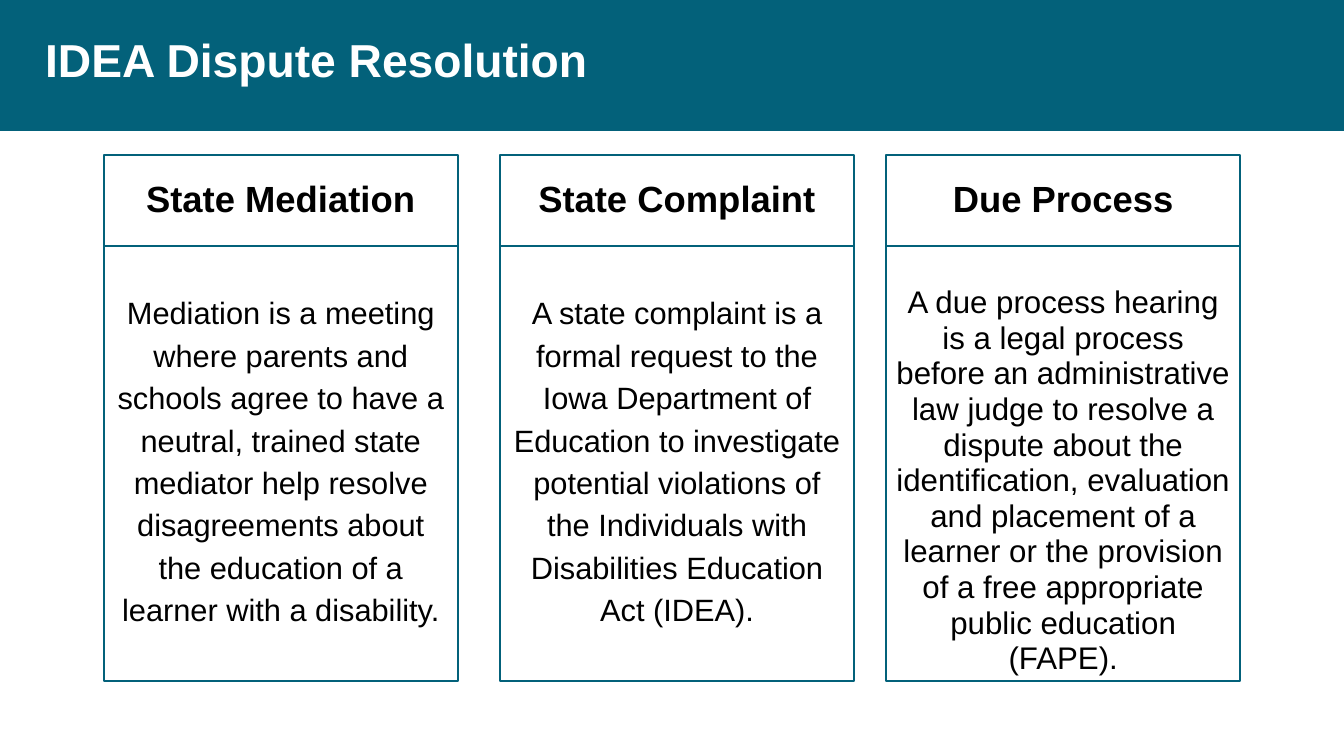
from dataclasses import dataclass

from pptx import Presentation
from pptx.dml.color import RGBColor as RGB
from pptx.enum.shapes import MSO_SHAPE as Shape
from pptx.enum.text import MSO_ANCHOR as Anchor, PP_ALIGN as Align
from pptx.util import Emu, Pt

EMU_PER_PX = 9144  # 100 px to the inch


@dataclass(frozen=True)
class Theme:
    teal: RGB = RGB(0x03, 0x61, 0x7A)
    white: RGB = RGB(0xFF, 0xFF, 0xFF)
    black: RGB = RGB(0, 0, 0)
    font: str = "Arial"
    title: float = 33
    heading: float = 26
    border: float = 1.5


@dataclass(frozen=True)
class Option:
    left: int
    heading: str
    body: str
    size: float = 22
    spacing: float = 1.15
    inset_top: int = 42


THEME = Theme()
SLIDE_W, SLIDE_H = 1333, 750
BAND_H = 130
CARD_W, CARD_TOP, HEADING_H, BODY_H = 351, 154, 90, 432

OPTIONS = [
    Option(103, "State Mediation",
           "Mediation is a meeting where parents and schools agree to have a "
           "neutral, trained state mediator help resolve disagreements about "
           "the education of a learner with a disability."),
    Option(496, "State Complaint",
           "A state complaint is a formal request to the Iowa Department of "
           "Education to investigate potential violations of the Individuals "
           "with Disabilities Education Act (IDEA)."),
    Option(879, "Due Process",
           "A due process hearing is a legal process before an administrative "
           "law judge to resolve a dispute about the identification, evaluation "
           "and placement of a learner or the provision of a free appropriate "
           "public education (FAPE).",
           size=22.3, spacing=0.95, inset_top=39),
]


def px(n: int) -> Emu:
    return Emu(n * EMU_PER_PX)


def add_rect(s, left: int, top: int, width: int, height: int):
    sp = s.shapes.add_shape(Shape.RECTANGLE, px(left), px(top), px(width), px(height))
    sp.shadow.inherit = False
    return sp


def set_text(sp, text: str, size: float, color: RGB, bold: bool = False,
             align: Align = Align.CENTER, anchor: Anchor = Anchor.MIDDLE,
             spacing: float = 0.9, inset_top: int = 5) -> None:
    tf = sp.text_frame
    tf.word_wrap = True
    tf.vertical_anchor = anchor
    tf.margin_left = tf.margin_right = px(10)
    tf.margin_top, tf.margin_bottom = px(inset_top), px(5)
    p = tf.paragraphs[0]
    p.text = text
    p.alignment = align
    p.line_spacing = spacing
    p.font.name, p.font.size, p.font.bold = THEME.font, Pt(size), bold
    p.font.color.rgb = color


def add_cell(s, left: int, top: int, height: int):
    sp = add_rect(s, left, top, CARD_W, height)
    sp.fill.background()
    sp.line.color.rgb = THEME.teal
    sp.line.width = Pt(THEME.border)
    return sp


def add_option(s, option: Option) -> None:
    heading = add_cell(s, option.left, CARD_TOP, HEADING_H)
    set_text(heading, option.heading, THEME.heading, THEME.black, bold=True)
    body = add_cell(s, option.left, CARD_TOP + HEADING_H, BODY_H)
    set_text(body, option.body, option.size, THEME.black, anchor=Anchor.TOP,
             spacing=option.spacing, inset_top=option.inset_top)


def main() -> None:
    prs = Presentation()
    prs.slide_width, prs.slide_height = px(SLIDE_W), px(SLIDE_H)
    s = prs.slides.add_slide(prs.slide_layouts[6])

    # Title band
    band = add_rect(s, 0, 0, SLIDE_W, BAND_H)
    band.fill.solid()
    band.fill.fore_color.rgb = THEME.teal
    band.line.fill.background()
    title = s.shapes.add_textbox(px(35), px(14), px(1150), px(97))
    set_text(title, "IDEA Dispute Resolution", THEME.title, THEME.white,
             bold=True, align=Align.LEFT)

    # Dispute options
    for option in OPTIONS:
        add_option(s, option)

    prs.save("out.pptx")


if __name__ == "__main__":
    main()
